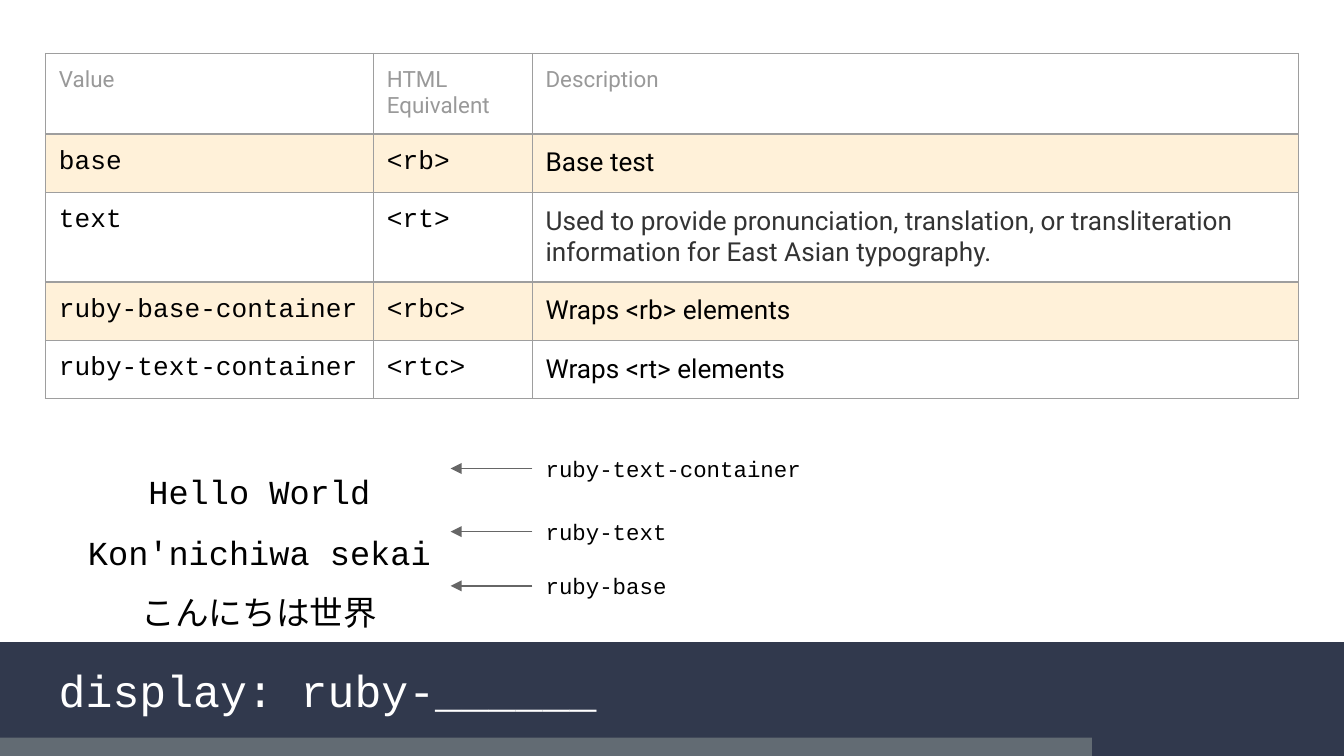
import dataclasses

import pptx
import pptx.dml.color
import pptx.enum.shapes
import pptx.enum.text
import pptx.oxml
import pptx.oxml.ns
import pptx.util

Pt = pptx.util.Pt
ALIGN = pptx.enum.text.PP_ALIGN
ANCHOR = pptx.enum.text.MSO_ANCHOR
NAMESPACE = pptx.oxml.ns.nsdecls("a")


@dataclasses.dataclass(frozen=True)
class Theme:
    code_font: str = "Courier New"
    text_font: str = "Roboto"
    title_size: float = 24
    sample_size: float = 18
    cell_size: float = 14
    small_size: float = 12
    inset: float = 7.2
    line_width: float = 0.75
    black: str = "000000"
    white: str = "FFFFFF"
    heading: str = "999999"
    body: str = "333333"
    border: str = "9E9E9E"
    arrow: str = "666666"
    stripe: str = "FFA500"
    stripe_alpha: int = 15
    band: str = "31394D"
    progress: str = "626B73"


def rgb(value):
    return pptx.dml.color.RGBColor.from_string(value)


class SlideBuilder:
    def __init__(self, slide, theme):
        self.slide = slide
        self.theme = theme

    def format_paragraph(self, paragraph, font, size, color):
        for run in paragraph.runs:
            run.font.name = font
            run.font.size = Pt(size)
            run.font.color.rgb = rgb(color)

    def set_margins(self, target):
        for side in ("left", "top", "right", "bottom"):
            setattr(target, f"margin_{side}", Pt(self.theme.inset))

    def rectangle(self, left, top, width, height, color):
        shape = self.slide.shapes.add_shape(
            pptx.enum.shapes.MSO_SHAPE.RECTANGLE,
            Pt(left), Pt(top), Pt(width), Pt(height))
        shape.shadow.inherit = False
        shape.fill.solid()
        shape.fill.fore_color.rgb = rgb(color)
        shape.line.fill.background()

    def text(self, left, top, width, height, lines, size, color,
             align=ALIGN.LEFT, spacing=1.0):
        """Add a text box; lines holds (wording, font) pairs."""
        box = self.slide.shapes.add_textbox(Pt(left), Pt(top), Pt(width), Pt(height))
        frame = box.text_frame
        frame.word_wrap = True
        frame.vertical_anchor = ANCHOR.MIDDLE
        self.set_margins(frame)
        frame.text = "\n".join(wording for wording, _ in lines)
        for paragraph, (_, font) in zip(frame.paragraphs, lines):
            paragraph.alignment = align
            paragraph.line_spacing = spacing
            self.format_paragraph(paragraph, font, size, color)

    def arrow(self, start, end, y):
        connector = self.slide.shapes.add_connector(
            pptx.enum.shapes.MSO_CONNECTOR.STRAIGHT, Pt(start), Pt(y), Pt(end), Pt(y))
        connector.line.color.rgb = rgb(self.theme.arrow)
        connector.line.width = Pt(self.theme.line_width)
        connector.line._get_or_add_ln().append(
            pptx.oxml.parse_xml(f'<a:tailEnd {NAMESPACE} type="triangle"/>'))
        connector._element.spPr.append(pptx.oxml.parse_xml(f"<a:effectLst {NAMESPACE}/>"))

    def cell(self, cell, wording, font, size, color, striped):
        cell.text_frame.text = wording
        self.set_margins(cell)
        self.format_paragraph(cell.text_frame.paragraphs[0], font, size, color)
        if striped:
            cell.fill.solid()
            cell.fill.fore_color.rgb = rgb(self.theme.stripe)
        else:
            cell.fill.background()
        properties = cell._tc.get_or_add_tcPr()
        for color_element in properties.iter(pptx.oxml.ns.qn("a:srgbClr")):
            color_element.append(pptx.oxml.parse_xml(
                f'<a:alpha {NAMESPACE} val="{self.theme.stripe_alpha * 1000}"/>'))
        for index, side in enumerate("LRTB"):
            properties.insert(index, pptx.oxml.parse_xml(
                f'<a:ln{side} {NAMESPACE} w="{Pt(self.theme.line_width)}"><a:solidFill>'
                f'<a:srgbClr val="{self.theme.border}"/></a:solidFill></a:ln{side}>'))

    def table(self, left, top, widths, row_height, rows):
        theme = self.theme
        table = self.slide.shapes.add_table(
            len(rows), len(widths), Pt(left), Pt(top),
            Pt(sum(widths)), Pt(row_height * len(rows))).table
        table.first_row = table.horz_banding = False
        for column, width in zip(table.columns, widths):
            column.width = Pt(width)
        for row_index, row in enumerate(rows):
            for column_index, wording in enumerate(row):
                is_text = row_index == 0 or column_index == 2
                font = theme.text_font if is_text else theme.code_font
                size, color = theme.cell_size, theme.black
                if row_index == 0:
                    size, color = theme.small_size, theme.heading
                elif (row_index, column_index) == (2, 2):
                    color = theme.body
                self.cell(table.cell(row_index, column_index), wording,
                          font, size, color, row_index % 2 == 1)


def main():
    theme = Theme()
    presentation = pptx.Presentation()
    presentation.slide_width, presentation.slide_height = Pt(720), Pt(405)
    builder = SlideBuilder(
        presentation.slides.add_slide(presentation.slide_layouts[6]), theme)
    left = 24.4

    # Title band with progress bar
    builder.rectangle(0, 344, 720, 61, theme.band)
    builder.text(left, 351.4, 628.6, 36, [("display: ruby-______", theme.code_font)],
                 theme.title_size, theme.white)
    builder.rectangle(0, 395.2, 585, 9.8, theme.progress)

    # Table of values
    builder.table(left, 28.6, (175.7, 85, 410.4), 30.2, [
        ("Value", "HTML Equivalent", "Description"),
        ("base", "<rb>", "Base test"),
        ("text", "<rt>", "Used to provide pronunciation, translation, or "
         "transliteration information for East Asian typography."),
        ("ruby-base-container", "<rbc>", "Wraps <rb> elements"),
        ("ruby-text-container", "<rtc>", "Wraps <rt> elements"),
    ])

    # Ruby sample
    builder.text(left, 236.2, 229, 108, [
        ("Hello World", theme.code_font),
        ("Kon'nichiwa sekai", theme.code_font),
        ("こんにちは世界", theme.text_font),
    ], theme.sample_size, theme.black, ALIGN.CENTER, 1.5)

    # Labels with arrows pointing at the sample
    label_left, arrow_end, label_height = 285.2, 241.4, 25
    for wording, y in (("ruby-text-container", 251), ("ruby-text", 284.8),
                       ("ruby-base", 313.9)):
        builder.text(label_left, y - label_height / 2, 166.3, label_height,
                     [(wording, theme.code_font)], theme.small_size, theme.black)
        builder.arrow(label_left, arrow_end, y)

    presentation.save("out.pptx")


if __name__ == "__main__":
    main()
